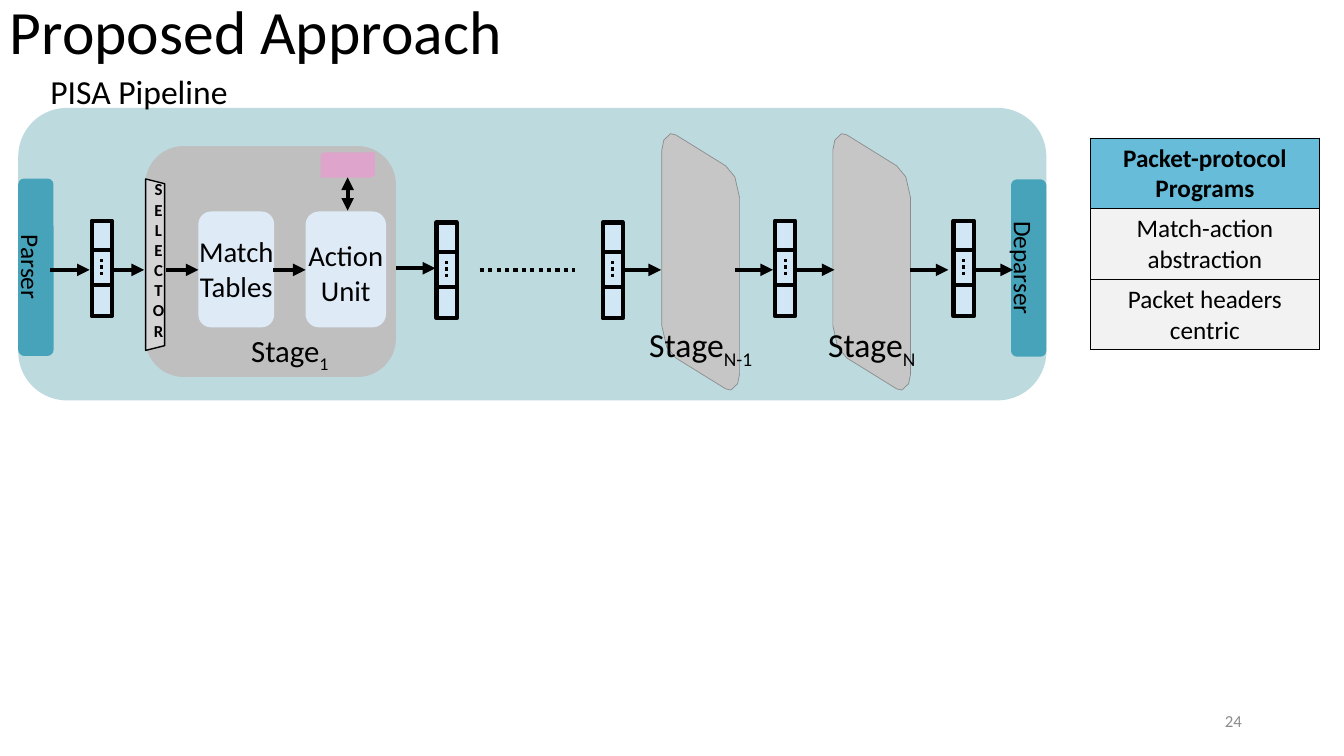
from dataclasses import dataclass

from lxml.etree import SubElement
from pptx import Presentation
from pptx.dml.color import RGBColor
from pptx.enum.dml import MSO_LINE_DASH_STYLE as Dash
from pptx.enum.shapes import MSO_CONNECTOR_TYPE as Connector, MSO_SHAPE as Preset
from pptx.enum.text import MSO_ANCHOR as Anchor, PP_ALIGN as Align
from pptx.oxml.ns import qn
from pptx.util import Cm, Pt


@dataclass(frozen=True)
class Theme:
    font: str = "Calibri"
    black: str = "000000"
    white: str = "FFFFFF"
    pipeline: str = "BDDADF"
    parser: str = "47A3BA"
    stage: str = "BFBFBF"
    slanted: str = "C6C6C6"
    slanted_edge: str = "8C8C8C"
    packet: str = "D1E7F6"
    unit: str = "DEEBF7"
    memory: str = "FF8AD8"
    header: str = "67BCD9"
    row: str = "F2F2F2"
    muted: str = "8C8C8C"
    title_size: float = 44
    parser_size: float = 31.3
    label_size: float = 24
    stage_size: float = 22
    unit_size: float = 20.5
    table_size: float = 18
    small_size: float = 12


THEME = Theme()
SUBSCRIPT = -25000
FLOW_Y = 6.8
# Half of a slanted stage's outline around its centre; the rest is its point reflection.
SLANTED_HALF = [(-0.98, -2.82), (-0.93, -3.07), (-0.76, -3.23), (-0.63, -3.2),
                (0.63, -2.42), (0.86, -2.14), (0.98, -1.61)]


def set_format(target, values):
    for name, value in values.items():
        setattr(target, name, value)


def paint(shape, fill, alpha=None, line=None, width=1):
    shape.shadow.inherit = False
    shape.fill.solid()
    shape.fill.fore_color.rgb = RGBColor.from_string(fill)
    if alpha is not None:
        color = shape.fill._xPr.find(qn("a:solidFill"))[0]
        SubElement(color, qn("a:alpha"), val=str(alpha * 1000))
    if line:
        shape.line.color.rgb = RGBColor.from_string(line)
        shape.line.width = Pt(width)
    else:
        shape.line.fill.background()


def add_box(slide, preset, box, fill, rotation=0, **style):
    shape = slide.shapes.add_shape(preset, *map(Cm, box))
    shape.rotation = rotation
    paint(shape, fill, **style)


def add_line(slide, start, end, width=3, dash=None, heads=()):
    """Heads names the ends with a triangle: headEnd at start, tailEnd at end."""
    line = slide.shapes.add_connector(Connector.STRAIGHT, *map(Cm, start + end))
    line.line.color.rgb = RGBColor.from_string(THEME.black)
    set_format(line.line, {"width": Pt(width), "dash_style": dash})
    outline = line.line._get_or_add_ln()
    for head in heads:
        SubElement(outline, qn(f"a:{head}"), type="triangle")
    SubElement(line._element.spPr, qn("a:effectLst"))


def add_flow(slide, left, right, y=FLOW_Y):
    add_line(slide, (left, y), (right, y), heads=("tailEnd",))


def add_run(paragraph, text, size, color=THEME.black, bold=False, baseline=0):
    run = paragraph.add_run()
    run.text = text
    set_format(run.font, {"name": THEME.font, "size": Pt(size), "bold": bold})
    run.font.color.rgb = RGBColor.from_string(color)
    if baseline:
        run.font._element.set("baseline", str(baseline))


def add_label(slide, box, text, size, subscript="", align=Align.CENTER, anchor=Anchor.TOP,
              rotation=0, wrap=True, spacing=None, **style):
    """Each line of text becomes a paragraph; subscript follows the last one."""
    label = slide.shapes.add_textbox(*map(Cm, box))
    label.rotation = rotation
    frame = label.text_frame
    set_format(frame, {"word_wrap": wrap, "vertical_anchor": anchor})
    for index, line in enumerate(text.split("\n")):
        paragraph = frame.add_paragraph() if index else frame.paragraphs[0]
        set_format(paragraph, {"alignment": align, "line_spacing": spacing})
        add_run(paragraph, line, size, **style)
    if subscript:
        add_run(paragraph, subscript, size, baseline=SUBSCRIPT)
    return frame


def add_packet(slide, left, top):
    """Packet header vector: a column with two dividers and an ellipsis."""
    width, height = 0.51, 2.41
    add_box(slide, Preset.RECTANGLE, (left, top, width, height), THEME.packet,
            line=THEME.black, width=3)
    for offset in (0.74, 1.63):
        add_line(slide, (left, top + offset), (left + width, top + offset))
    middle = left + width / 2
    add_line(slide, (middle, top + 0.97), (middle, top + 1.4), 2.25, Dash.ROUND_DOT)


def add_slanted_stage(slide, center_x, center_y, number):
    outline = SLANTED_HALF + [(-x, -y) for x, y in SLANTED_HALF]
    points = [(Cm(center_x + x), Cm(center_y + y)) for x, y in outline]
    builder = slide.shapes.build_freeform(*points[0])
    builder.add_line_segments(points[1:], close=True)
    paint(builder.convert_to_shape(), THEME.slanted, line=THEME.slanted_edge, width=0.5)
    add_label(slide, (center_x - 2.3, 8.05, 4.6, 1.27), "Stage", THEME.label_size, number)


def add_parser(slide, left, top, name):
    width, height, text_height = 0.89, 4.47, 1.19
    add_box(slide, Preset.FLOWCHART_ALTERNATE_PROCESS, (left, top, width, height), THEME.parser)
    text_box = (left + (width - height) / 2 + 0.25, top + (height - text_height) / 2,
                height, text_height)
    add_label(slide, text_box, name, THEME.parser_size, anchor=Anchor.MIDDLE,
              rotation=90, baseline=SUBSCRIPT)


def add_unit(slide, left, width, text, text_top):
    add_box(slide, Preset.FLOWCHART_ALTERNATE_PROCESS, (left, 5.33, width, 2.92), THEME.unit)
    add_label(slide, (left + width / 2 - 1.23, text_top, 2.46, 2.01), text, THEME.unit_size)


def add_first_stage(slide):
    add_box(slide, Preset.FLOWCHART_ALTERNATE_PROCESS, (3.66, 3.68, 6.32, 5.82), THEME.stage)
    add_box(slide, Preset.ROUND_2_DIAG_RECTANGLE, (8.08, 3.84, 1.37, 0.64), THEME.memory, alpha=50)
    add_unit(slide, 5, 1.91, "Match Tables", 5.77)
    add_unit(slide, 7.7, 2.03, "Action Unit", 5.87)
    add_box(slide, Preset.TRAPEZOID, (1.75, 6.43, 4.32, 0.48), THEME.white, rotation=90,
            alpha=33, line=THEME.black)
    selector = add_label(slide, (3.78, 4.39, 0.43, 4.37), "\n".join("SELECTOR"),
                         THEME.small_size, wrap=False, bold=True)
    set_format(selector, {"margin_left": 0, "margin_right": 0})
    add_line(slide, (8.76, 4.47), (8.76, 5.31), heads=("headEnd", "tailEnd"))
    add_label(slide, (3.1, 8.23, 8.41, 1.19), "Stage", THEME.stage_size, "1")


def add_border(cell):
    properties = cell._tc.get_or_add_tcPr()
    for index, side in enumerate(("lnL", "lnR", "lnT", "lnB")):
        line = SubElement(properties, qn(f"a:{side}"), w=str(Pt(1)))
        fill = SubElement(line, qn("a:solidFill"))
        SubElement(fill, qn("a:srgbClr"), val=THEME.black)
        properties.insert(index, line)


def add_program_table(slide, box, texts):
    table = slide.shapes.add_table(len(texts), 1, *map(Cm, box)).table
    for index, text in enumerate(texts):
        cell = table.cell(index, 0)
        cell.fill.solid()
        cell.fill.fore_color.rgb = RGBColor.from_string(THEME.row if index else THEME.header)
        paragraph = cell.text_frame.paragraphs[0]
        paragraph.alignment = Align.CENTER
        add_run(paragraph, text, THEME.table_size, bold=index == 0)
        add_border(cell)


def main():
    presentation = Presentation()
    set_format(presentation, {"slide_width": Cm(33.87), "slide_height": Cm(19.05)})
    slide = presentation.slides.add_slide(presentation.slide_layouts[6])

    add_box(slide, Preset.ROUNDED_RECTANGLE, (0.46, 2.72, 25.91, 7.37), THEME.pipeline)
    add_parser(slide, 0.46, 4.5, "Parser")
    add_parser(slide, 25.48, 4.52, "Deparser")
    add_first_stage(slide)
    for center_x, number in ((17.66, "N-1"), (21.97, "N")):
        add_slanted_stage(slide, center_x, 6.6, number)
    for left, top in ((2.31, 5.56), (11, 5.61), (15.19, 5.61), (19.53, 5.56), (24.03, 5.56)):
        add_packet(slide, left, top)
    for left, right in ((1.27, 2.26), (2.84, 3.63), (4.19, 5), (6.88, 7.7), (15.7, 16.66),
                        (18.52, 19.48), (20.07, 21.03), (22.94, 23.9), (24.56, 25.53)):
        add_flow(slide, left, right)
    add_flow(slide, 9.98, 10.97, 6.76)
    add_line(slide, (12.09, FLOW_Y), (14.48, FLOW_Y), dash=Dash.ROUND_DOT)

    add_label(slide, (1.02, 1.65, 12.24, 1.27), "PISA Pipeline", THEME.label_size,
              align=Align.LEFT)
    add_label(slide, (0, -0.08, 33.48, 2.54), "Proposed Approach", THEME.title_size,
              align=Align.LEFT, spacing=0.9)
    add_program_table(slide, (27.48, 3.48, 5.77, 5.33), (
        "Packet-protocol Programs", "Match-action abstraction", "Packet headers centric"))
    add_label(slide, (23.93, 17.65, 7.62, 1.02), "24", THEME.small_size, align=Align.RIGHT,
              anchor=Anchor.MIDDLE, color=THEME.muted)
    presentation.save("out.pptx")


if __name__ == "__main__":
    main()
